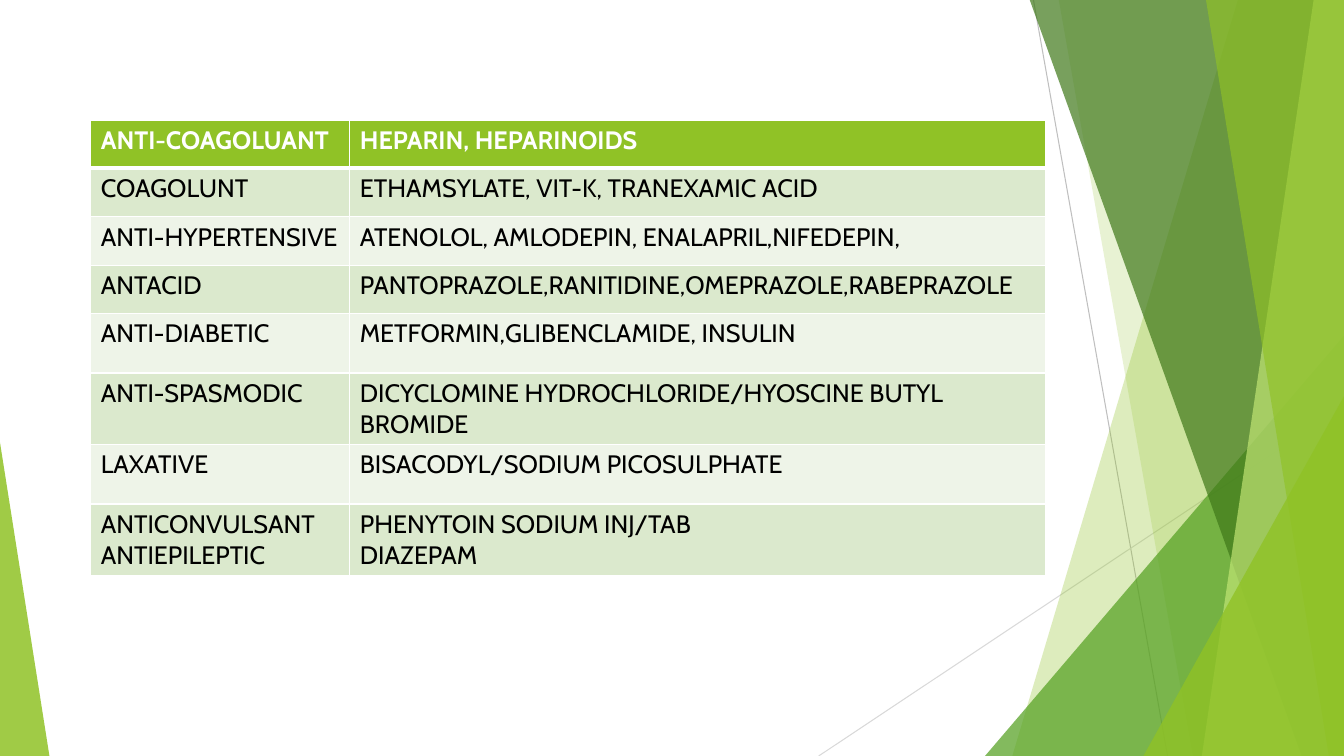
"""Build a slide with a table of drug groups beside green facets."""
from pptx import Presentation
from pptx.dml.color import RGBColor
from pptx.enum.shapes import MSO_CONNECTOR, MSO_SHAPE
from pptx.oxml.ns import qn
from pptx.oxml.xmlchemy import OxmlElement
from pptx.util import Inches, Pt

GREEN, WHITE, BLACK = "90C226", "FFFFFF", "000000"
BANDS = ["DBE9CD", "EEF4E8"]
WIDE, HIGH, TOP = 13.33, 7.5, -0.01

DRUGS = [
    ("ANTI-COAGOLUANT", "HEPARIN, HEPARINOIDS"),
    ("COAGOLUNT", "ETHAMSYLATE, VIT-K, TRANEXAMIC ACID"),
    ("ANTI-HYPERTENSIVE", "ATENOLOL, AMLODEPIN, ENALAPRIL,NIFEDEPIN,"),
    ("ANTACID", "PANTOPRAZOLE,RANITIDINE,OMEPRAZOLE,RABEPRAZOLE"),
    ("ANTI-DIABETIC", "METFORMIN,GLIBENCLAMIDE, INSULIN"),
    ("ANTI-SPASMODIC", "DICYCLOMINE HYDROCHLORIDE/HYOSCINE BUTYL BROMIDE"),
    ("LAXATIVE", "BISACODYL/SODIUM PICOSULPHATE"),
    ("ANTICONVULSANT\nANTIEPILEPTIC", "PHENYTOIN SODIUM INJ/TAB\nDIAZEPAM"),
]


def color(code):
    return RGBColor.from_string(code)


class Page:
    def __init__(self, slide, font, size):
        self.slide, self.font, self.size = slide, font, size

    def line(self, start, end, code):
        ends = [Inches(n) for n in (*start, *end)]
        line = self.slide.shapes.add_connector(MSO_CONNECTOR.STRAIGHT, *ends)
        line.line.color.rgb = color(code)
        line.line.width = Pt(0.75)
        line._element.spPr.append(OxmlElement("a:effectLst"))

    def paint(self, shape, code, alpha):
        shape.shadow.inherit = False
        shape.fill.solid()
        shape.fill.fore_color.rgb = color(code)
        shape.line.fill.background()
        tint = OxmlElement("a:alpha")
        tint.set("val", str(alpha * 1000))
        shape._element.spPr.find(".//" + qn("a:srgbClr")).append(tint)

    def facet(self, top, base, code, alpha):
        spots = [(top, TOP), (WIDE, TOP), (WIDE, HIGH), (base, HIGH)]
        spots = [(Inches(x), Inches(y)) for x, y in spots]
        form = self.slide.shapes.build_freeform(*spots[0], scale=1.0)
        form.add_line_segments(spots[1:], close=True)
        self.paint(form.convert_to_shape(), code, alpha)

    def wedge(self, left, top, width, peak, code, alpha):
        box = [Inches(n) for n in (left, top, width, HIGH - top)]
        shape = self.slide.shapes.add_shape(MSO_SHAPE.ISOSCELES_TRIANGLE, *box)
        shape.adjustments[0] = peak
        self.paint(shape, code, alpha)

    def edge(self, cell, side, width):
        line = OxmlElement("a:" + side)
        line.set("w", str(Pt(width)))
        fill = OxmlElement("a:solidFill")
        tone = OxmlElement("a:srgbClr")
        tone.set("val", WHITE)
        fill.append(tone)
        line.append(fill)
        cell._tc.get_or_add_tcPr().append(line)

    def cell(self, cell, text, row):
        head = row == 0
        for side in ("lnL", "lnR", "lnT", "lnB"):
            thick = (head and side == "lnB") or (row == 1 and side == "lnT")
            self.edge(cell, side, 3 if thick else 1)
        cell.fill.solid()
        cell.fill.fore_color.rgb = color(GREEN if head else BANDS[(row - 1) % 2])
        cell.text_frame.text = text
        for para in cell.text_frame.paragraphs:
            for run in para.runs:
                run.font.name, run.font.size = self.font, Pt(self.size)
                run.font.bold = head
                run.font.color.rgb = color(WHITE if head else BLACK)

    def table(self, left, top, cols, rows, data):
        box = [Inches(n) for n in (left, top, sum(cols), sum(rows))]
        table = self.slide.shapes.add_table(len(rows), len(cols), *box).table
        for col, width in zip(table.columns, cols):
            col.width = Inches(width)
        for row, height in zip(table.rows, rows):
            row.height = Inches(height)
        for r, texts in enumerate(data):
            for c, text in enumerate(texts):
                self.cell(table.cell(r, c), text, r)


def main():
    deck = Presentation()
    deck.slide_width, deck.slide_height = Inches(WIDE), Inches(HIGH)
    page = Page(deck.slides.add_slide(deck.slide_layouts[6]), "Cabin", 18)
    page.line((10.25, 0), (11.58, HIGH), "BFBFBF")
    page.line((WIDE, 4.03), (8.12, HIGH), "D9D9D9")
    page.facet(12.28, 10.04, GREEN, 30)
    page.facet(10.5, 11.83, GREEN, 20)
    page.wedge(9.77, 3.33, 3.56, 1, "54A021", 72)
    page.facet(10.21, 12.91, "3F7819", 70)
    page.facet(13.03, 11.92, "C0E474", 70)
    page.facet(11.96, 13.18, GREEN, 65)
    page.wedge(11.34, 3.93, 1.99, 1, GREEN, 80)
    page.wedge(0, 4.39, 0.49, 0, GREEN, 85)
    page.table(0.9, 1.19, [2.57, 6.9], [0.48] * 4 + [0.59] * 4, DRUGS)
    deck.save("out.pptx")


if __name__ == "__main__":
    main()
